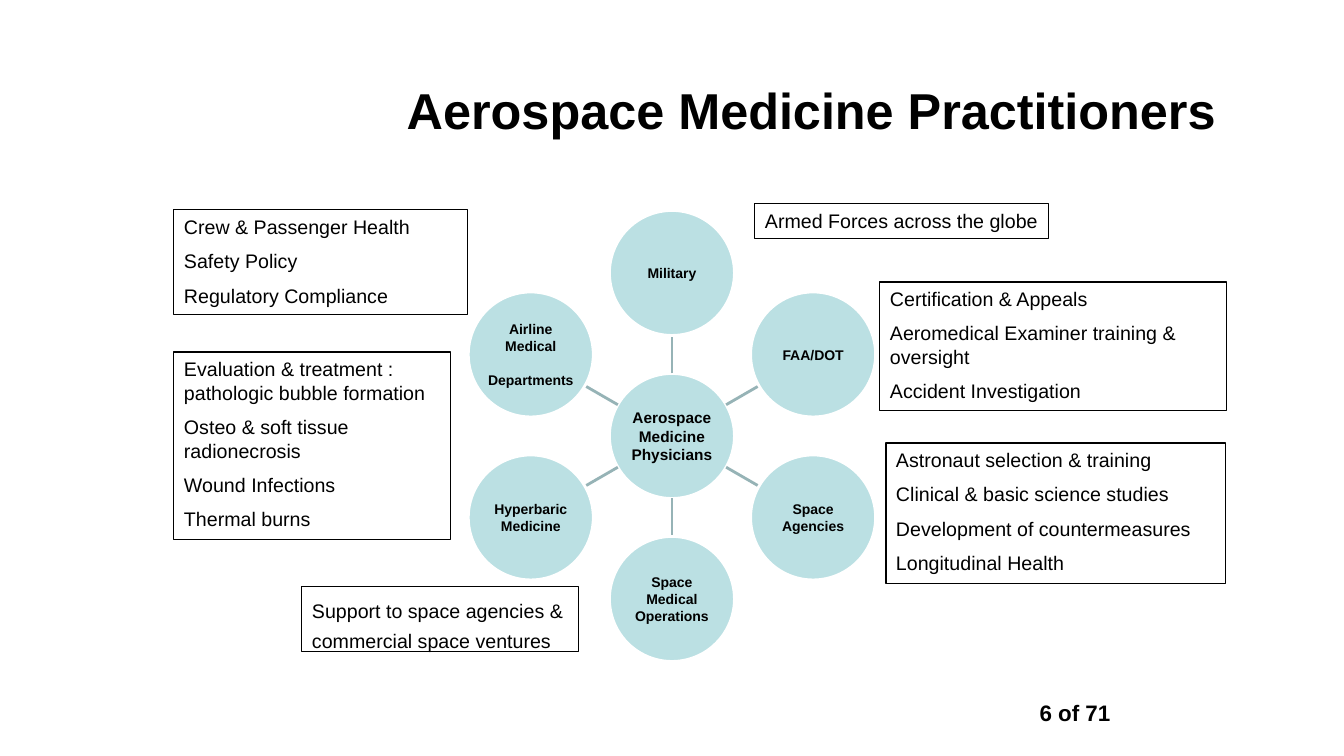
from dataclasses import dataclass
from math import cos, radians, sin

from lxml.etree import SubElement
from pptx import Presentation
from pptx.dml.color import RGBColor
from pptx.enum.shapes import MSO_CONNECTOR, MSO_SHAPE
from pptx.enum.text import MSO_ANCHOR, MSO_AUTO_SIZE, PP_ALIGN
from pptx.oxml.ns import qn
from pptx.util import Pt

# Content
TITLE = "Aerospace Medicine Practitioners"
PAGE = "6 of 71"
HUB = ["Aerospace", "Medicine", "Physicians"]
SPOKES = [  # clockwise from the top: label lines, gap before the last line in points
    (["Military"], 0),
    (["FAA/DOT"], 0),
    (["Space", "Agencies"], 0),
    (["Space", "Medical", "Operations"], 0),
    (["Hyperbaric", "Medicine"], 0),
    (["Airline", "Medical", "Departments"], 12),
]
NOTES = [  # left, top, width, height in px; line spacing; paragraphs
    ((174, 210, 294, 105), 1, ["Crew & Passenger Health", "Safety Policy",
                               "Regulatory Compliance"]),
    ((755, 204, 294, 35), 1, ["Armed Forces across the globe"]),
    ((880, 282, 347, 129), 1, ["Certification & Appeals",
                               "Aeromedical Examiner training & oversight",
                               "Accident Investigation"]),
    ((886, 443, 340, 141), 1, ["Astronaut selection & training",
                               "Clinical & basic science studies",
                               "Development of countermeasures",
                               "Longitudinal Health"]),
    ((174, 352, 277, 188), 1, ["Evaluation & treatment : pathologic bubble formation",
                               "Osteo & soft tissue radionecrosis",
                               "Wound Infections", "Thermal burns"]),
    ((302, 587, 277, 65), 1.28, ["Support to space agencies & commercial space ventures"]),
]


@dataclass(frozen=True)
class Theme:
    font: str = "Arial"
    ink: RGBColor = RGBColor(0, 0, 0)
    paper: RGBColor = RGBColor(255, 255, 255)
    disc: RGBColor = RGBColor(0xBB, 0xE0, 0xE3)
    spoke: RGBColor = RGBColor(0x96, 0xB3, 0xB6)
    title_size: int = 36
    page_size: int = 16
    note_size: int = 14
    hub_size: int = 11
    label_size: int = 10


THEME = Theme()

# Geometry in px
SLIDE_W, SLIDE_H = 1344, 756
TITLE_BOX = (347, 42, 929, 134)
PAGE_BOX = (1016, 697, 118, 34)
HUB_X, HUB_Y = 672, 436
ORBIT = 163
DISC = 125
NOTE_GAP = 7.7  # points between paragraphs


def emu(px):
    return round(px * 914400 / 100.8)


def box(left, top, width, height):
    return [emu(px) for px in (left, top, width, height)]


def write(frame, lines, *, size, bold=False, align=PP_ALIGN.LEFT, anchor=MSO_ANCHOR.TOP,
          inset=(10, 5), wrap=True, gap=0, last_gap=0, spacing=1):
    frame.auto_size = MSO_AUTO_SIZE.NONE
    frame.word_wrap = wrap
    frame.vertical_anchor = anchor
    frame.margin_left = frame.margin_right = emu(inset[0])
    frame.margin_top = frame.margin_bottom = emu(inset[1])
    for index, line in enumerate(lines):
        paragraph = frame.paragraphs[0] if index == 0 else frame.add_paragraph()
        paragraph.text = line
        paragraph.alignment = align
        paragraph.line_spacing = spacing
        is_last = index == len(lines) - 1
        paragraph.space_before = Pt(0 if index == 0 else last_gap if is_last and last_gap else gap)
        font = paragraph.font
        font.name, font.size, font.bold = THEME.font, Pt(size), bold
        font.color.rgb = THEME.ink


def add_disc(slide, x, y, lines, size, last_gap=0):
    disc = slide.shapes.add_shape(
        MSO_SHAPE.OVAL, *box(x - DISC / 2, y - DISC / 2, DISC, DISC))
    disc.shadow.inherit = False
    disc.fill.solid()
    disc.fill.fore_color.rgb = THEME.disc
    disc.line.color.rgb = THEME.paper
    disc.line.width = Pt(2)
    write(disc.text_frame, lines, size=size, bold=True, align=PP_ALIGN.CENTER,
          anchor=MSO_ANCHOR.MIDDLE, inset=(1, 1), wrap=False, last_gap=last_gap)


def add_spoke(slide, dx, dy):
    near, far = DISC / 2, ORBIT - DISC / 2
    ends = (HUB_X + near * dx, HUB_Y + near * dy, HUB_X + far * dx, HUB_Y + far * dy)
    spoke = slide.shapes.add_connector(MSO_CONNECTOR.STRAIGHT, *[emu(px) for px in ends])
    spoke.line.color.rgb = THEME.spoke
    spoke.line.width = Pt(2)
    SubElement(spoke._element.spPr, qn("a:effectLst"))


def add_note(slide, place, spacing, lines):
    note = slide.shapes.add_shape(MSO_SHAPE.RECTANGLE, *box(*place))
    note.shadow.inherit = False
    note.fill.background()
    note.line.color.rgb = THEME.ink
    note.line.width = Pt(0.75)
    write(note.text_frame, lines, size=THEME.note_size, gap=NOTE_GAP, spacing=spacing)


def main():
    deck = Presentation()
    deck.slide_width, deck.slide_height = emu(SLIDE_W), emu(SLIDE_H)
    slide = deck.slides.add_slide(deck.slide_layouts[5])

    # Title and page number
    title = slide.shapes.title
    title.left, title.top, title.width, title.height = box(*TITLE_BOX)
    write(title.text_frame, [TITLE], size=THEME.title_size, bold=True,
          align=PP_ALIGN.CENTER, anchor=MSO_ANCHOR.MIDDLE)
    page = slide.shapes.add_textbox(*box(*PAGE_BOX))
    write(page.text_frame, [PAGE], size=THEME.page_size, bold=True,
          align=PP_ALIGN.CENTER, spacing=0.9)

    # Hub and spokes
    add_disc(slide, HUB_X, HUB_Y, HUB, THEME.hub_size)
    for index, (label, last_gap) in enumerate(SPOKES):
        angle = radians(index * 360 / len(SPOKES) - 90)
        dx, dy = cos(angle), sin(angle)
        add_spoke(slide, dx, dy)
        add_disc(slide, HUB_X + ORBIT * dx, HUB_Y + ORBIT * dy, label,
                 THEME.label_size, last_gap)

    # Notes around the wheel
    for place, spacing, lines in NOTES:
        add_note(slide, place, spacing, lines)

    deck.save("out.pptx")


if __name__ == "__main__":
    main()
